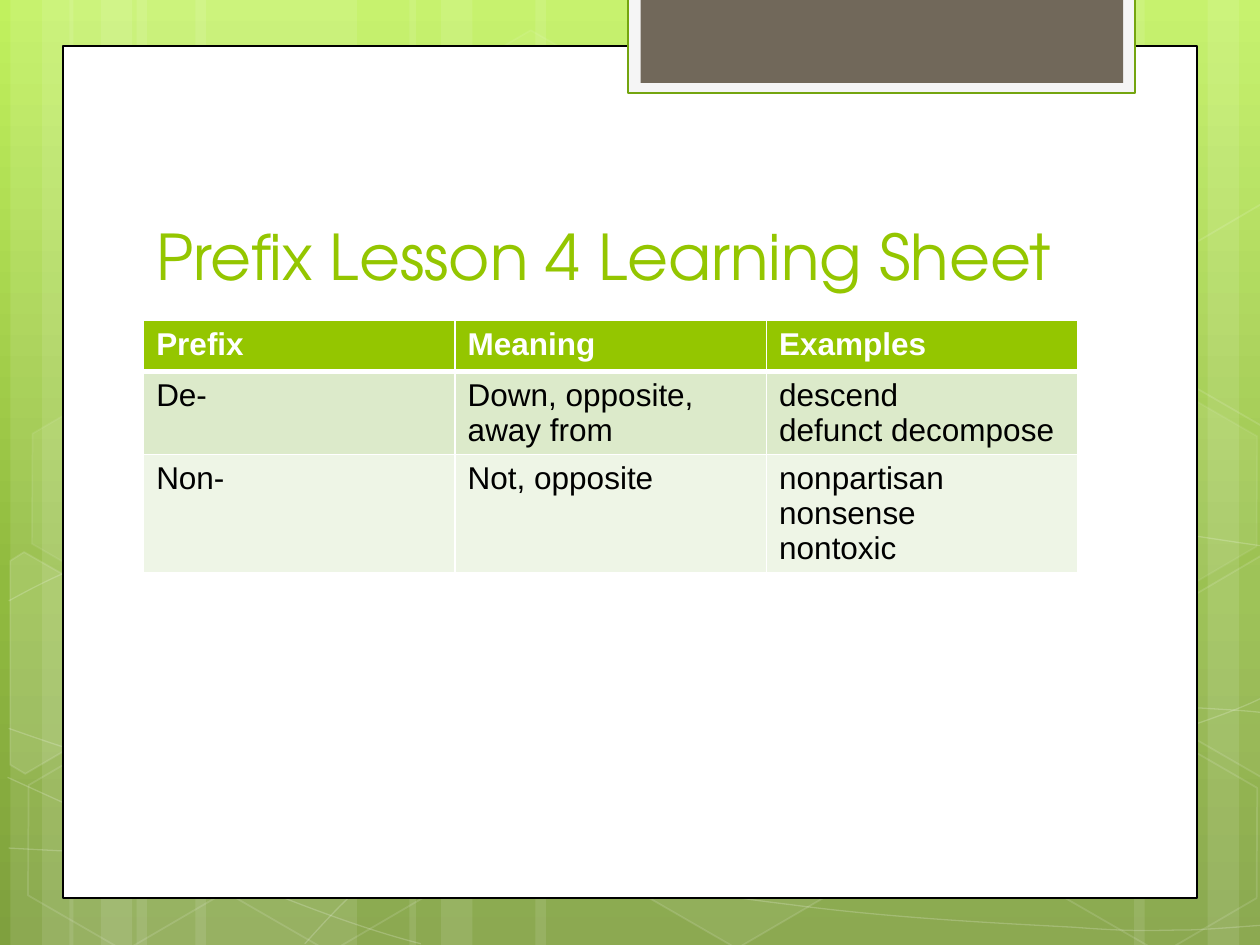
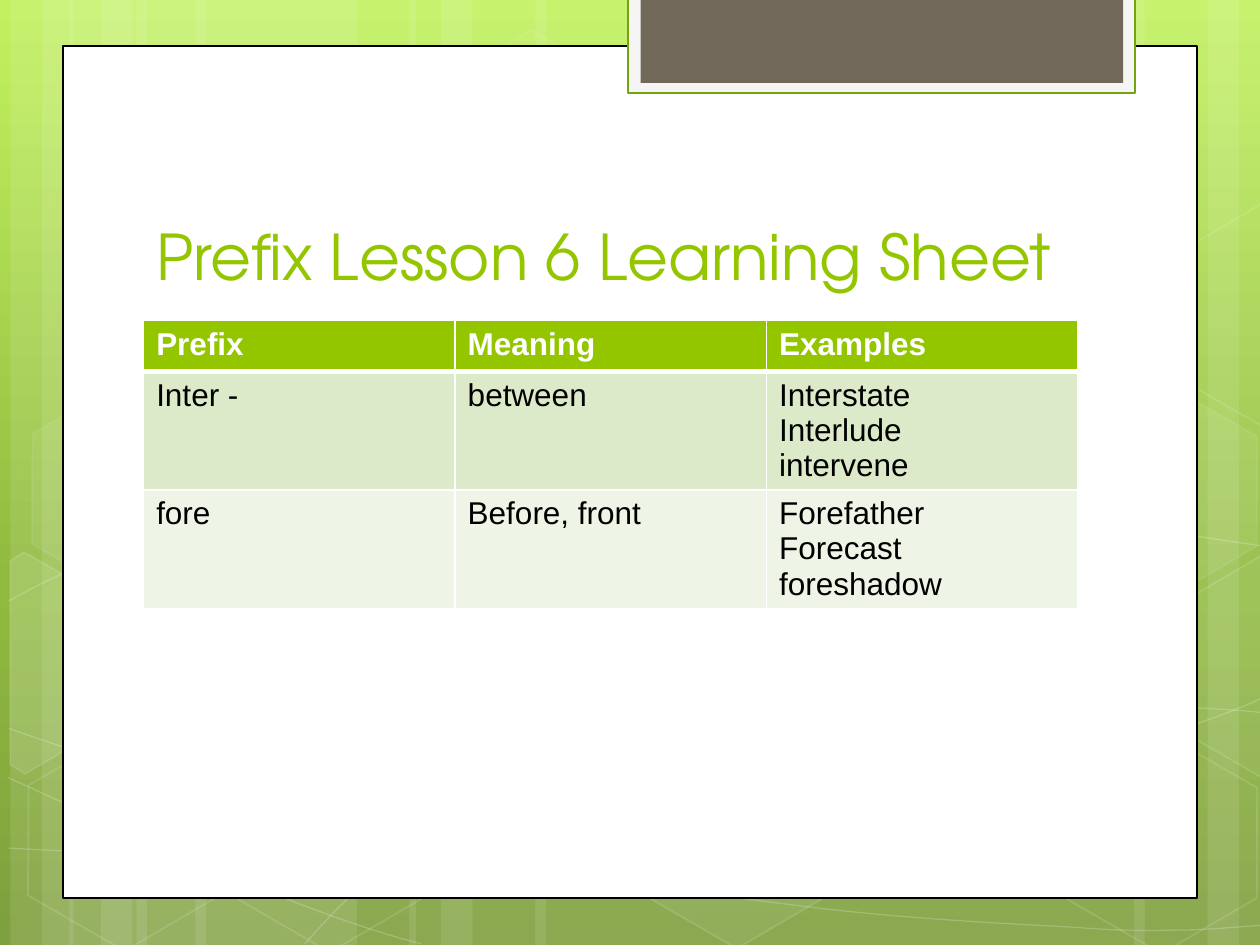
"""Build two prefix lesson slides on a shared green layout."""

from copy import deepcopy
from dataclasses import dataclass
from math import cos, radians, sin
from typing import Optional, Sequence

from lxml import etree
from pptx import Presentation
from pptx.dml.color import RGBColor
from pptx.enum.shapes import MSO_SHAPE
from pptx.enum.text import MSO_ANCHOR, PP_ALIGN
from pptx.oxml.ns import qn
from pptx.shapes.autoshape import Shape
from pptx.shapes.shapetree import GroupShapes
from pptx.slide import Slide, SlideLayout
from pptx.table import _Cell
from pptx.text.text import _Paragraph
from pptx.util import Pt

RECTANGLE = MSO_SHAPE.RECTANGLE
HEXAGON = MSO_SHAPE.HEXAGON
BOTTOM = MSO_ANCHOR.BOTTOM
LEFT = PP_ALIGN.LEFT

WHITE, BLACK, GREEN = "FFFFFF", "000000", "94C600"
BODY_FILLS = ("DCEACA", "EEF5E6")
GRADIENT = ((0, "C1F15E"), (0.62, "90BA3F"), (1, "7FA03E"))
TITLE_FONT, TABLE_FONT = "TeX Gyre Adventor", "Arial"
SLIDE_WIDTH, SLIDE_HEIGHT = 720, 540
CONTENT_LEFT = 82.08
COLUMN_WIDTH, ROW_HEIGHT = 178, 29.2
HEX_WIDTH, HEX_HEIGHT, HEX_TILT = 126, 109.4, 30
HEADINGS = ("Prefix", "Meaning", "Examples")

Point = tuple[float, float]


@dataclass(frozen=True)
class Style:
    fill: Optional[str] = None
    fill_opacity: int = 100
    line: Optional[str] = None
    line_width: float = 1
    line_opacity: int = 100


@dataclass(frozen=True)
class Box:
    left: float
    top: float
    width: float
    height: float
    style: Style


@dataclass(frozen=True)
class StripeBand:
    origin: float
    wide_width: float
    mirrored: bool = False


@dataclass(frozen=True)
class Hexagon:
    left: float
    top: float
    fill_opacity: int
    line_opacity: int


@dataclass(frozen=True)
class CutHexagon:
    center: Point
    outline: tuple[Point, ...]
    fill_opacity: int


@dataclass(frozen=True)
class Lesson:
    number: int
    rows: tuple[tuple[str, str, str], ...]


STRIPE_STYLE = Style(WHITE, 10)
CURVE_STYLE = Style(line=WHITE, line_width=0.75, line_opacity=20)
BANDS = (
    StripeBand(6, 126),
    StripeBand(39.6, 126),
    StripeBand(726, 126, mirrored=True),
    StripeBand(234, 222),
)
CURVES: tuple[tuple[Point, ...], ...] = (
    ((5, 484.6), (43.9, 486.7), (82.8, 488.9), (136.8, 488.2),
     (190.8, 487.4), (257.8, 486), (329.8, 478.8),
     (401.8, 471.6), (504, 457.9), (570.2, 444.2),
     (635.8, 430.6), (703.4, 409), (725, 396.7)),
    ((5, 343.4), (25.9, 331.9), (46.8, 321.1), (87.1, 310.3),
     (128.2, 299.5), (186.5, 283.7), (249.8, 278.6),
     (313.9, 273.6), (391.7, 272.9), (470.9, 278.6),
     (550.1, 284.4), (681.8, 306.7), (725, 312.5)),
    ((4.3, 444.2), (91.4, 483.8), (177.8, 523.4), (240.5, 539.3)),
    ((5, 416.2), (27.4, 424.1), (50.4, 432), (92.2, 443.5),
     (133.9, 454.3), (196.6, 472.3), (257, 484.6),
     (316.8, 496.8), (392.4, 509.8), (452.2, 517),
     (511.9, 524.9), (576, 527.8), (614.2, 529.9),
     (651.6, 532.8), (661.7, 531.4), (680.4, 531.4),
     (699.1, 530.6), (712.1, 529.2), (725, 528.5)),
    ((174.2, 539.3), (187.2, 524.9), (200.2, 510.5), (217.4, 497.5),
     (234.7, 484.6), (259.2, 470.2), (279.4, 460.1),
     (295.2, 450), (311.8, 445.7), (338.4, 438.5),
     (364.3, 431.3), (412.6, 421.2), (437.8, 416.2),
     (463.7, 411.1), (467.3, 411.1), (489.6, 409.7),
     (511.2, 406.8), (547.2, 405.4), (571.7, 404.6),
     (596.9, 403.9), (637.9, 404.6), (637.9, 404.6),
     (637.9, 404.6), (686.2, 404.6), (686.2, 404.6),
     (699.1, 405.4), (711.4, 406.1), (717.8, 406.8),
     (724.3, 407.5), (722.2, 406.8), (724.3, 407.5)),
)
HEXAGONS = (
    Hexagon(240.5, 25.9, 4, 8),
    Hexagon(357.8, 424.1, 6, 12),
    Hexagon(7.9, 425.5, 0, 12),
    Hexagon(10.1, 224.6, 7, 8),
    Hexagon(125.3, 426.2, 0, 12),
    Hexagon(542.2, 326.2, 10, 12),
    Hexagon(600.5, 427, 0, 12),
    Hexagon(600.5, 226.1, 7, 8),
)
LEFT_CUT = ((-20.1, -64.8), (-12.2, -69.8), (43.2, -38.2),
            (42.5, 25.2), (-11.5, 56.9), (-20.1, 51.8))
RIGHT_CUT = ((-42.5, -25.2), (11.5, -56.9), (17.3, -53.3),
             (17.3, 67), (12.2, 69.8), (-42.5, 38.2))
CUT_HEXAGONS = (
    CutHexagon((25.9, 385.2), LEFT_CUT, 10),
    CutHexagon((709.2, 374.4), RIGHT_CUT, 4),
    CutHexagon((709.2, 173.5), RIGHT_CUT, 0),
)
PANELS = (
    Box(36, 26.25, 648, 487, Style(WHITE, line=BLACK, line_width=0.75)),
    Box(359, -1.4, 289.6, 54.7, Style("F5F5F5", line="74A50F", line_width=1.25)),
    Box(366.1, -1.4, 275.8, 48.8, Style("71685A")),
)
LESSONS = (
    Lesson(4, (
        ("De-", "Down, opposite, away from", "descend\ndefunct decompose"),
        ("Non-", "Not, opposite", "nonpartisan\nnonsense\nnontoxic"),
    )),
    Lesson(6, (
        ("Inter -", "between", "Interstate\nInterlude\nintervene"),
        ("fore", "Before, front", "Forefather\nForecast\nforeshadow"),
    )),
)


def rgb(color: str) -> RGBColor:
    return RGBColor.from_string(color)


def set_opacity(shape: Shape, parent: str, percent: int) -> None:
    if percent < 100:
        color = shape.element.xpath(f"{parent}/a:solidFill/a:srgbClr")[0]
        etree.SubElement(color, qn("a:alpha")).set("val", str(percent * 1000))


def apply_style(shape: Shape, style: Style) -> None:
    shape.shadow.inherit = False
    if style.fill and style.fill_opacity:
        shape.fill.solid()
        shape.fill.fore_color.rgb = rgb(style.fill)
        set_opacity(shape, "p:spPr", style.fill_opacity)
    else:
        shape.fill.background()
    if style.line:
        shape.line.color.rgb = rgb(style.line)
        shape.line.width = Pt(style.line_width)
        set_opacity(shape, "p:spPr/a:ln", style.line_opacity)
    else:
        shape.line.fill.background()


def add_box(shapes: GroupShapes, box: Box, kind: MSO_SHAPE = RECTANGLE) -> Shape:
    shape = shapes.add_shape(kind, Pt(box.left), Pt(box.top), Pt(box.width), Pt(box.height))
    apply_style(shape, box.style)
    return shape


def add_outline(shapes: GroupShapes, points: Sequence[Point], style: Style, close: bool) -> Shape:
    start, *rest = [(Pt(x), Pt(y)) for x, y in points]
    builder = shapes.build_freeform(*start)
    builder.add_line_segments(rest, close=close)
    shape = builder.convert_to_shape()
    apply_style(shape, style)
    return shape


def add_band(shapes: GroupShapes, band: StripeBand) -> None:
    for offset, width in ((72, band.wide_width), (0, 36), (18, 60)):
        left = band.origin - offset - width if band.mirrored else band.origin + offset
        stripe = add_box(shapes, Box(left, 0, width, SLIDE_HEIGHT, STRIPE_STYLE))
        stripe.rotation = 180 if band.mirrored else 0


def add_curve(shapes: GroupShapes, controls: tuple[Point, ...]) -> None:
    shape = add_outline(shapes, controls, CURVE_STYLE, close=False)
    segments = shape.element.xpath(".//a:lnTo")
    for first in range(0, len(segments), 3):
        curve = etree.SubElement(segments[first].getparent(), qn("a:cubicBezTo"))
        for segment in segments[first:first + 3]:
            curve.append(segment[0])
            segment.getparent().remove(segment)


def hexagon_style(fill_opacity: int, line_opacity: int = 12) -> Style:
    return Style(WHITE, fill_opacity, WHITE, 1, line_opacity)


def add_hexagon(shapes: GroupShapes, hexagon: Hexagon) -> None:
    style = hexagon_style(hexagon.fill_opacity, hexagon.line_opacity)
    box = Box(hexagon.left, hexagon.top, HEX_WIDTH, HEX_HEIGHT, style)
    shape = add_box(shapes, box, HEXAGON)
    shape.adjustments[0] = 0.285
    shape.rotation = HEX_TILT


def add_cut_hexagon(shapes: GroupShapes, hexagon: CutHexagon) -> None:
    center_x, center_y = hexagon.center
    cosine, sine = cos(radians(HEX_TILT)), sin(radians(HEX_TILT))
    points = [(center_x + x * cosine + y * sine, center_y - x * sine + y * cosine)
              for x, y in hexagon.outline]
    shape = add_outline(shapes, points, hexagon_style(hexagon.fill_opacity), close=True)
    shape.rotation = HEX_TILT


def set_background(layout: SlideLayout) -> None:
    fill = layout.background.fill
    fill.gradient()
    fill.gradient_angle = 270
    stop_list = layout.element.find(".//" + qn("a:gsLst"))
    stop_list.append(deepcopy(stop_list[-1]))
    for stop, (position, color) in zip(fill.gradient_stops, GRADIENT):
        stop.position = position
        stop.color.rgb = rgb(color)


def decorate_layout(layout: SlideLayout, slide: Slide) -> None:
    set_background(layout)
    for placeholder in list(layout.placeholders)[1:]:
        layout.shapes.element.remove(placeholder.element)
    pattern = slide.shapes.add_group_shape()
    for band in BANDS:
        add_band(pattern.shapes, band)
    for controls in CURVES:
        add_curve(pattern.shapes, controls)
    for hexagon in HEXAGONS:
        add_hexagon(pattern.shapes, hexagon)
    for cut_hexagon in CUT_HEXAGONS:
        add_cut_hexagon(pattern.shapes, cut_hexagon)
    panels = [add_box(slide.shapes, panel) for panel in PANELS]
    for position, shape in enumerate([pattern, *panels], start=2):
        layout.shapes.element.insert(position, shape.element)


def set_font(paragraph: _Paragraph, name: str, size: float, color: str, bold: bool = False) -> None:
    paragraph.alignment = LEFT
    font = paragraph.font
    font.name, font.size, font.bold = name, Pt(size), bold
    font.color.rgb = rgb(color)


def add_title(slide: Slide, text: str) -> None:
    title = slide.shapes.title
    title.left, title.top, title.width, title.height = Pt(CONTENT_LEFT), Pt(81), Pt(553), Pt(90)
    title.text_frame.text = text
    title.text_frame.vertical_anchor = BOTTOM
    set_font(title.text_frame.paragraphs[0], TITLE_FONT, 36, GREEN)


def format_cell(cell: _Cell, row: int) -> None:
    properties = cell._tc.get_or_add_tcPr()
    widths = {"L": 1, "R": 1, "T": 3 if row == 1 else 1, "B": 3 if row == 0 else 1}
    for side, width in widths.items():
        line = etree.SubElement(properties, qn(f"a:ln{side}"), w=str(Pt(width)))
        solid = etree.SubElement(line, qn("a:solidFill"))
        etree.SubElement(solid, qn("a:srgbClr"), val=WHITE)
    cell.fill.solid()
    cell.fill.fore_color.rgb = rgb(BODY_FILLS[row - 1] if row else GREEN)
    for paragraph in cell.text_frame.paragraphs:
        set_font(paragraph, TABLE_FONT, 18, BLACK if row else WHITE, bold=row == 0)


def add_prefix_table(slide: Slide, lesson: Lesson) -> None:
    rows = (HEADINGS, *lesson.rows)
    table = slide.shapes.add_table(
        len(rows), len(HEADINGS), Pt(CONTENT_LEFT), Pt(183),
        Pt(COLUMN_WIDTH * len(HEADINGS)), Pt(ROW_HEIGHT * len(rows))).table
    for row, texts in enumerate(rows):
        for column, text in enumerate(texts):
            cell = table.cell(row, column)
            cell.text = text
            format_cell(cell, row)


def main() -> None:
    presentation = Presentation()
    presentation.slide_width, presentation.slide_height = Pt(SLIDE_WIDTH), Pt(SLIDE_HEIGHT)
    layout = presentation.slide_layouts[5]
    slides = [presentation.slides.add_slide(layout) for _ in LESSONS]
    decorate_layout(layout, slides[0])
    for slide, lesson in zip(slides, LESSONS):
        add_title(slide, f"Prefix Lesson {lesson.number} Learning Sheet")
        add_prefix_table(slide, lesson)
    presentation.save("out.pptx")


if __name__ == "__main__":
    main()
